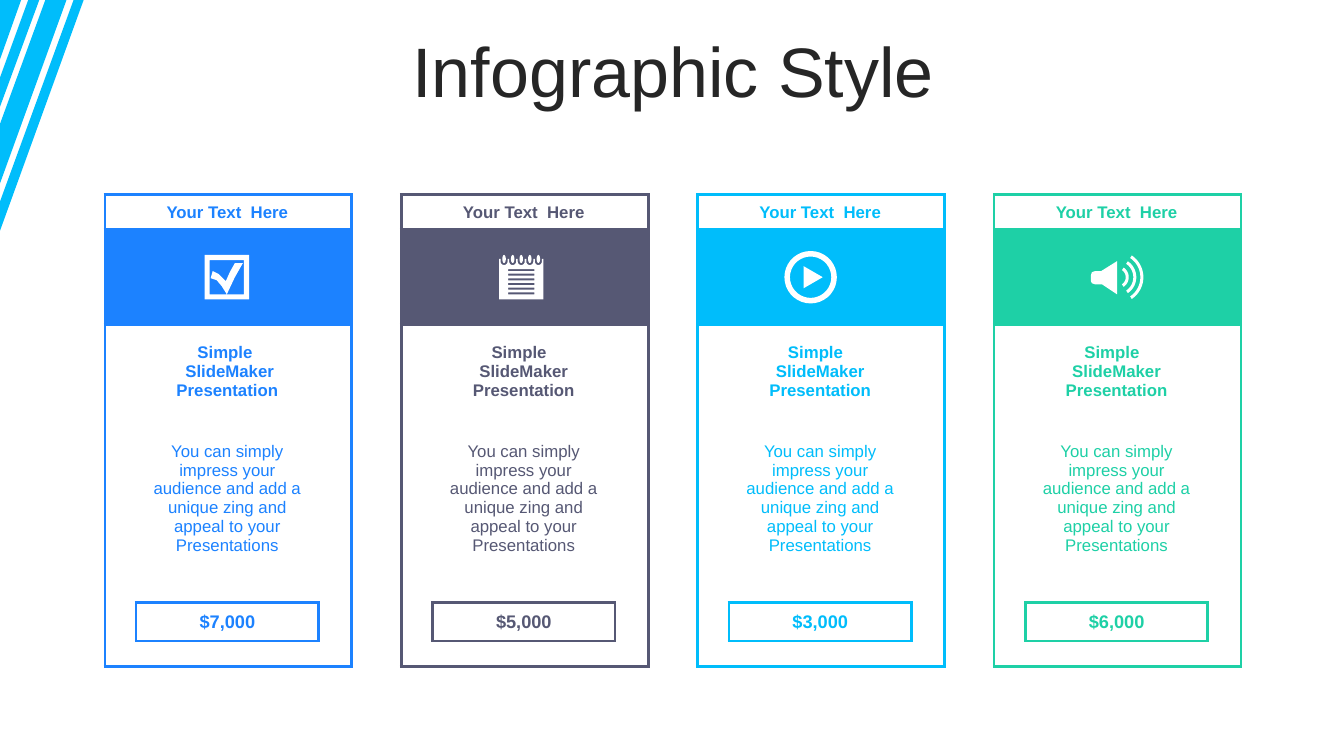
import math

import pptx
import pptx.dml.color
import pptx.enum.text
import pptx.oxml.ns
import pptx.util
from lxml import etree

Inches, Pt = pptx.util.Inches, pptx.util.Pt
qn = pptx.oxml.ns.qn
MIDDLE = pptx.enum.text.MSO_ANCHOR.MIDDLE

BODY = ("You can simply impress your audience and add a unique zing "
        "and appeal to your Presentations")
COL_WIDTHS = (0.31, 1.81, 0.33)
ROW_HEIGHTS = (0.35, 0.94, 0.94, 1.57, 0.25, 0.38, 0.25)
ICON_ROW, PRICE_ROW, LAST_ROW = 1, 5, 6


def paint(fill, color, alpha=None):
    fill.solid()
    fill.fore_color.rgb = pptx.dml.color.RGBColor.from_string(color)
    if alpha:
        srgb = fill._xPr.find(".//" + qn("a:srgbClr"))
        etree.SubElement(srgb, qn("a:alpha"), val=str(alpha * 1000))


def write(p, text, size, color, bold=False):
    p.alignment = pptx.enum.text.PP_ALIGN.CENTER
    r = p.add_run()
    r.text = text
    for name, value in {"name": "Arial", "size": Pt(size), "bold": bold}.items():
        setattr(r.font, name, value)
    paint(r.font.fill, color)


def add_outline(s, contours, color, left=0, top=0):
    """Draw closed contours, given in inches from (left, top), as one shape."""
    pts = [[(Inches(left + x), Inches(top + y)) for x, y in c] for c in contours]
    builder = s.shapes.build_freeform(*pts[0][0], scale=1.0)
    for i, contour in enumerate(pts):
        if i:
            builder.move_to(*contour[0])
        builder.add_line_segments(contour[1:], close=True)
    sp = builder.convert_to_shape()
    sp.shadow.inherit = False
    paint(sp.fill, color)
    sp.line.fill.background()


def arc(cx, cy, rx, ry, start=0, end=360, steps=36):
    angles = [math.radians(start + (end - start) * i / steps)
              for i in range(steps + 1)]
    return [(cx + rx * math.cos(a), cy + ry * math.sin(a)) for a in angles]


def box(left, top, right, bottom):
    return [(left, top), (right, top), (right, bottom), (left, bottom)]


# Each icon is a list of contours around its own centre.
def checkbox_icon():
    tick = [(-0.16, 0.01), (-0.14, -0.06), (-0.08, -0.03), (-0.01, 0.04),
            (0.03, -0.05), (0.08, -0.14), (0.16, -0.14), (0.08, 0),
            (0, 0.17), (-0.05, 0.09), (-0.1, 0.03)]
    return [box(-0.22, -0.22, 0.22, 0.22), box(-0.17, -0.17, 0.17, 0.17), tick]


def notepad_icon():
    rings = [0.085 * i for i in range(-2, 3)]
    page = [(-0.22, -0.18)]
    for x in rings:
        page += [(x - 0.035, -0.18), *arc(x, -0.155, 0.035, 0.035, 180, 0, 8),
                 (x + 0.035, -0.18)]
    page += [(0.22, -0.18), (0.22, 0.22), (-0.22, 0.22)]
    lines = [box(-0.13, y, 0.13, y + 0.02)
             for y in (-0.08 + 0.046 * i for i in range(6))]
    return [page, *lines, *(arc(x, -0.18, 0.017, 0.04) for x in rings)]


def play_icon():
    return [arc(0, 0, 0.26, 0.26), arc(0, 0, 0.205, 0.205),
            [(-0.07, -0.11), (0.12, 0), (-0.07, 0.11)]]


def speaker_icon():
    horn = [(0, -0.16), (0, 0.17), (-0.15, 0.07), (-0.22, 0.07), (-0.25, 0.06),
            (-0.26, 0.04), (-0.26, -0.02), (-0.25, -0.05), (-0.22, -0.06),
            (-0.16, -0.06)]
    waves = [arc(0, 0, r, r, -56, 56) + arc(0, 0, r - 0.03, r - 0.03, 56, -56)
             for r in (0.115, 0.19, 0.26)]
    return [horn, *waves]


def format_cell(cell, row, col, color):
    """Set the borders, fill and margins that belong to a place in the card."""
    price_box = col == 1 and row == PRICE_ROW
    sides = {
        "L": col == 0 or row == PRICE_ROW,
        "R": col == 2 or row == PRICE_ROW,
        "T": row <= ICON_ROW + 1 or price_box or (row, col) == (LAST_ROW, 1),
        "B": row in (0, ICON_ROW, LAST_ROW) or price_box
             or (row, col) == (PRICE_ROW - 1, 1),
    }
    tc_pr = cell._tc.get_or_add_tcPr()
    for side, shown in sides.items():
        ln = etree.SubElement(tc_pr, qn("a:ln" + side), w=str(Pt(2.25)))
        if shown:
            solid = etree.SubElement(ln, qn("a:solidFill"))
            etree.SubElement(solid, qn("a:srgbClr"), val=color)
        else:
            etree.SubElement(ln, qn("a:noFill"))
    if row == ICON_ROW:
        paint(cell.fill, color, 70)
    else:
        paint(cell.fill, "FFFFFF")
    cell.vertical_anchor = MIDDLE
    cell.margin_left = cell.margin_right = Inches(0.08)
    cell.margin_top = cell.margin_bottom = Inches(0.04)


def add_card(s, left, top, color, heading, price, icon, icon_x):
    frame = s.shapes.add_table(
        len(ROW_HEIGHTS), len(COL_WIDTHS), Inches(left), Inches(top),
        Inches(sum(COL_WIDTHS)), Inches(sum(ROW_HEIGHTS)))
    table = frame.table
    table.first_row = table.horz_banding = False
    for column, width in zip(table.columns, COL_WIDTHS):
        column.width = Inches(width)
    for row, height in zip(table.rows, ROW_HEIGHTS):
        row.height = Inches(height)

    texts = {0: (["Your Text  Here"], 12, True), 2: (heading, 12, True),
             3: ([BODY], 12, False), PRICE_ROW: ([price], 13, True)}
    for row in range(len(ROW_HEIGHTS)):
        for col in range(len(COL_WIDTHS)):
            cell = table.cell(row, col)
            format_cell(cell, row, col, color)
            tf = cell.text_frame
            if col == 1 and row in texts:
                lines, size, bold = texts[row]
                for i, line in enumerate(lines):
                    p = tf.add_paragraph() if i else tf.paragraphs[0]
                    write(p, line, size, color, bold)
            else:
                etree.SubElement(tf.paragraphs[0]._p, qn("a:endParaRPr"), sz="800")
    add_outline(s, icon(), "FFFFFF", left + icon_x, top + 0.82)


def add_corner_stripes(s):
    add_outline(s, [
        [(0.73, 0), (0.83, 0), (0, 2.29), (0, 2)],
        [(0.39, 0), (0, 1.06), (0, 0.77), (0.28, 0)],
        [(0.66, 0), (0, 1.82), (0, 1.23), (0.45, 0)],
        [(0, 0), (0.21, 0), (0, 0.59)],
    ], "00BDFB")


def add_title(s, left, top, width, height):
    sp = s.shapes.add_textbox(*map(Inches, (left, top, width, height)))
    tf = sp.text_frame
    tf.word_wrap = True
    tf.vertical_anchor = MIDDLE
    p = tf.paragraphs[0]
    p.line_spacing = 0.8
    p.space_before = Pt(10)
    write(p, "Infographic Style", 50, "262626")


def main():
    prs = pptx.Presentation()
    prs.slide_width, prs.slide_height = Inches(13.33), Inches(7.5)
    s = prs.slides.add_slide(prs.slide_layouts[6])
    add_corner_stripes(s)
    add_title(s, 0.35, 0.37, 12.66, 0.79)
    first = ["Simple ", " SlideMaker Presentation"]
    other = ["Simple  ", "SlideMaker Presentation"]
    cards = [
        ("1C82FF", first, "$7,000", checkbox_icon, 1.21),
        ("565874", other, "$5,000", notepad_icon, 1.19),
        ("00BDFB", other, "$3,000", play_icon, 1.12),
        ("1ED0A6", other, "$6,000", speaker_icon, 1.22),
    ]
    for i, card in enumerate(cards):
        add_card(s, 1.04 + 2.94 * i, 1.93, *card)
    prs.save("out.pptx")


if __name__ == "__main__":
    main()
